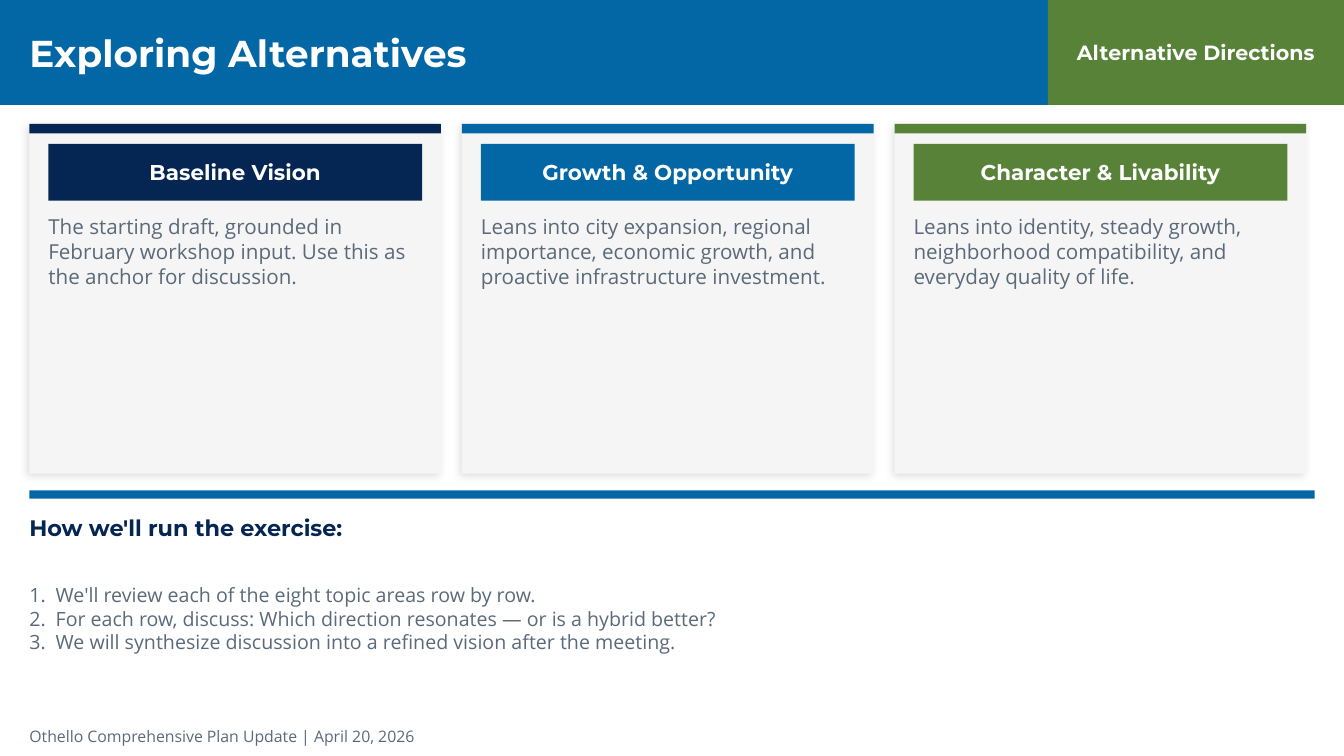
from dataclasses import dataclass

import pptx
import pptx.dml.color
import pptx.enum.shapes
import pptx.enum.text
import pptx.oxml
import pptx.oxml.ns
import pptx.shapes.autoshape
import pptx.slide
import pptx.util

RGBColor = pptx.dml.color.RGBColor
WHITE = RGBColor(0xFF, 0xFF, 0xFF)
NAVY = RGBColor(0x05, 0x26, 0x52)
BLUE = RGBColor(0x03, 0x67, 0xA5)
GREEN = RGBColor(0x57, 0x82, 0x38)
PALE = RGBColor(0xF5, 0xF5, 0xF5)
SLATE = RGBColor(0x5A, 0x6A, 0x7A)

LEFT = pptx.enum.text.PP_ALIGN.LEFT
CENTER = pptx.enum.text.PP_ALIGN.CENTER
TOP = pptx.enum.text.MSO_ANCHOR.TOP
MIDDLE = pptx.enum.text.MSO_ANCHOR.MIDDLE

EMU_PER_PX = 9525
SLIDE_WIDTH, SLIDE_HEIGHT = 1280, 720
HEADER_HEIGHT = 100
TAG_LEFT = 998
MARGIN = 28
CONTENT_WIDTH = SLIDE_WIDTH - 2 * MARGIN
CARD_TOP, CARD_WIDTH, CARD_HEIGHT = 118, 392, 333
CARD_PITCH = 412
CARD_PADDING = 18
STEP_INDENT = 25


@dataclass(frozen=True)
class Area:
    left: int
    top: int
    width: int
    height: int


@dataclass(frozen=True)
class TextStyle:
    font: str
    size: float
    color: RGBColor
    bold: bool = False
    align: pptx.enum.text.PP_ALIGN = LEFT
    anchor: pptx.enum.text.MSO_ANCHOR = MIDDLE


@dataclass(frozen=True)
class Direction:
    name: str
    summary: str
    color: RGBColor


TITLE = TextStyle("Montserrat", 26.7, WHITE, bold=True)
TAG = TextStyle("Montserrat", 14.7, WHITE, bold=True, align=CENTER)
CARD_NAME = TextStyle("Montserrat", 15.3, WHITE, bold=True, align=CENTER)
CARD_SUMMARY = TextStyle("Open Sans", 14.7, SLATE, anchor=TOP)
HEADING = TextStyle("Montserrat", 16, NAVY, bold=True)
STEP = TextStyle("Open Sans", 14, SLATE)
FOOTER = TextStyle("Open Sans", 11.3, SLATE)

DIRECTIONS = [
    Direction("Baseline Vision",
              "The starting draft, grounded in February workshop input. "
              "Use this as the anchor for discussion.", NAVY),
    Direction("Growth & Opportunity",
              "Leans into city expansion, regional importance, economic growth, "
              "and proactive infrastructure investment.", BLUE),
    Direction("Character & Livability",
              "Leans into identity, steady growth, neighborhood compatibility, "
              "and everyday quality of life.", GREEN),
]
STEPS = [
    "We'll review each of the eight topic areas row by row.",
    "For each row, discuss: Which direction resonates — or is a hybrid better?",
    "We will synthesize discussion into a refined vision after the meeting.",
]


def px(length: int) -> pptx.util.Emu:
    return pptx.util.Emu(length * EMU_PER_PX)


def place(area: Area) -> tuple[pptx.util.Emu, ...]:
    return px(area.left), px(area.top), px(area.width), px(area.height)


def write(box: pptx.shapes.autoshape.Shape, text: str, style: TextStyle) -> None:
    frame = box.text_frame
    frame.word_wrap = True
    frame.margin_left = frame.margin_right = 0
    frame.margin_top = frame.margin_bottom = 0
    frame.vertical_anchor = style.anchor
    frame.text = text
    for para in frame.paragraphs:
        para.alignment = style.align
        for span in para.runs:
            span.font.name = style.font
            span.font.size = pptx.util.Pt(style.size)
            span.font.bold = style.bold
            span.font.color.rgb = style.color


def add_text(page: pptx.slide.Slide, area: Area, text: str,
             style: TextStyle) -> pptx.shapes.autoshape.Shape:
    box = page.shapes.add_textbox(*place(area))
    write(box, text, style)
    return box


def add_block(page: pptx.slide.Slide, area: Area,
              color: RGBColor) -> pptx.shapes.autoshape.Shape:
    block = page.shapes.add_shape(
        pptx.enum.shapes.MSO_SHAPE.RECTANGLE, *place(area))
    block.shadow.inherit = False
    block.fill.solid()
    block.fill.fore_color.rgb = color
    block.line.fill.background()
    return block


def add_soft_shadow(block: pptx.shapes.autoshape.Shape) -> None:
    effects = block._element.spPr.find(pptx.oxml.ns.qn("a:effectLst"))
    effects.append(pptx.oxml.parse_xml(
        f'<a:outerShdw {pptx.oxml.ns.nsdecls("a")} blurRad="{pptx.util.Pt(6)}" '
        f'dist="{pptx.util.Pt(2)}" dir="{135 * 60000}" algn="bl" rotWithShape="0">'
        '<a:srgbClr val="000000"><a:alpha val="13000"/></a:srgbClr></a:outerShdw>'))


def number_paragraphs(box: pptx.shapes.autoshape.Shape) -> None:
    for para in box.text_frame.paragraphs:
        properties = para._p.get_or_add_pPr()
        properties.set("marL", str(px(STEP_INDENT)))
        properties.set("indent", str(-px(STEP_INDENT)))
        properties.append(pptx.oxml.parse_xml(
            f'<a:buAutoNum {pptx.oxml.ns.nsdecls("a")} type="arabicPeriod"/>'))


def add_card(page: pptx.slide.Slide, left: int, direction: Direction) -> None:
    card = add_block(page, Area(left, CARD_TOP, CARD_WIDTH, CARD_HEIGHT), PALE)
    add_soft_shadow(card)
    add_block(page, Area(left, CARD_TOP, CARD_WIDTH, 9), direction.color)

    inner_left = left + CARD_PADDING
    inner_width = CARD_WIDTH - 2 * CARD_PADDING
    label = add_block(page, Area(inner_left, CARD_TOP + 19, inner_width, 54),
                      direction.color)
    write(label, direction.name, CARD_NAME)
    add_text(page, Area(inner_left, CARD_TOP + 86, inner_width, 233),
             direction.summary, CARD_SUMMARY)


def main() -> None:
    deck = pptx.Presentation()
    deck.slide_width, deck.slide_height = px(SLIDE_WIDTH), px(SLIDE_HEIGHT)
    page = deck.slides.add_slide(deck.slide_layouts[6])

    # Header
    add_block(page, Area(0, 0, SLIDE_WIDTH, HEADER_HEIGHT), BLUE)
    add_text(page, Area(MARGIN, 0, 960, HEADER_HEIGHT),
             "Exploring Alternatives", TITLE)
    tag = add_block(
        page, Area(TAG_LEFT, 0, SLIDE_WIDTH - TAG_LEFT, HEADER_HEIGHT), GREEN)
    write(tag, "Alternative Directions", TAG)

    # Direction cards
    for index, direction in enumerate(DIRECTIONS):
        add_card(page, MARGIN + index * CARD_PITCH, direction)

    # Exercise steps
    add_block(page, Area(MARGIN, 467, CONTENT_WIDTH, 8), BLUE)
    add_text(page, Area(MARGIN, 484, CONTENT_WIDTH, 36),
             "How we'll run the exercise:", HEADING)
    steps = add_text(page, Area(MARGIN, 525, CONTENT_WIDTH, 128),
                     "\n".join(STEPS), STEP)
    number_paragraphs(steps)

    # Footer
    add_text(page, Area(MARGIN, 688, CONTENT_WIDTH, 26),
             "Othello Comprehensive Plan Update | April 20, 2026", FOOTER)

    deck.save("out.pptx")


if __name__ == "__main__":
    main()
